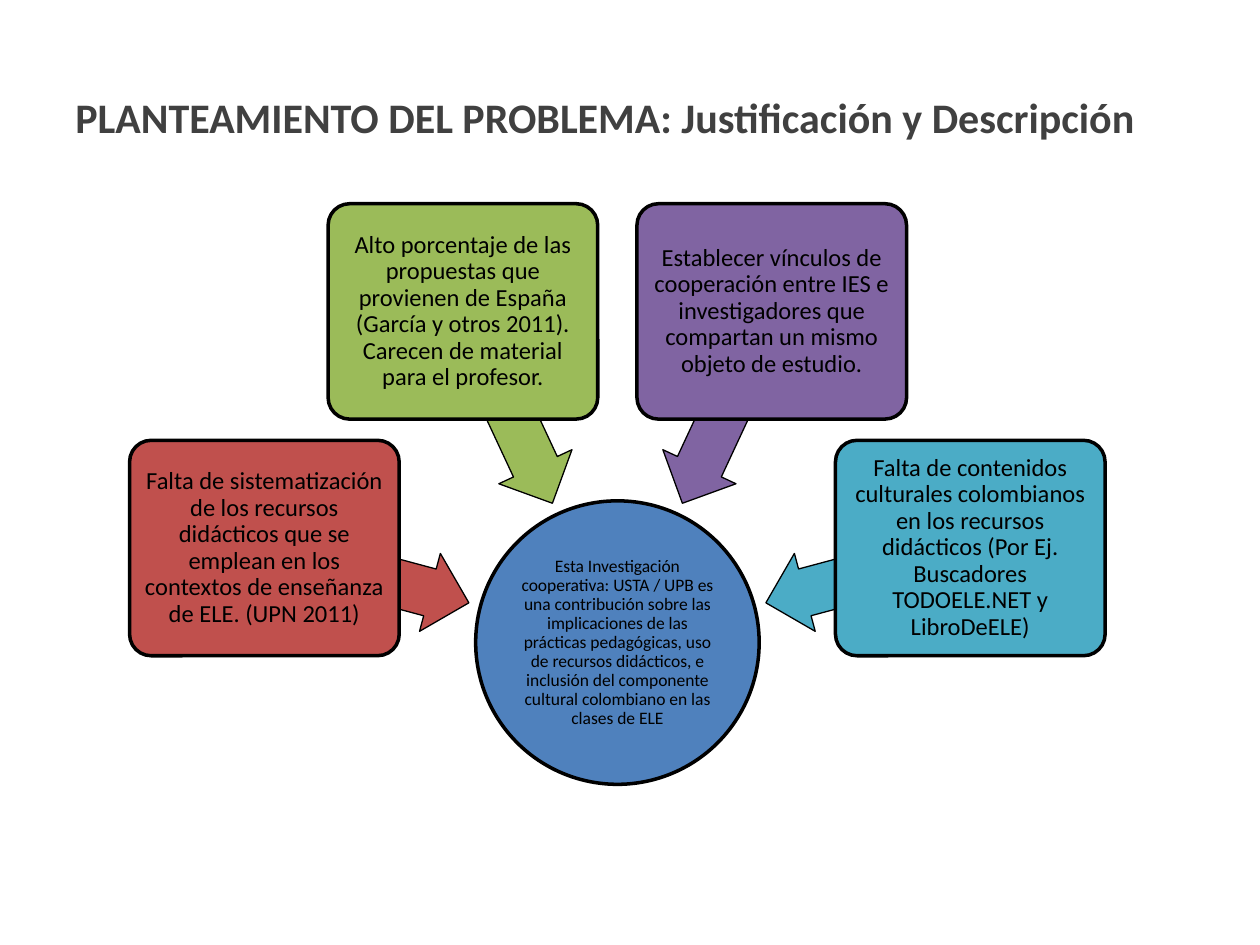
from math import cos, radians, sin

from pptx import Presentation
from pptx.dml.color import RGBColor
from pptx.enum.shapes import MSO_SHAPE as SHAPE
from pptx.enum.text import MSO_ANCHOR as ANCHOR, PP_ALIGN as ALIGN
from pptx.util import Inches, Pt

COLORS = {
    "title": "404040",
    "black": "000000",
    "blue": "4F81BD",
    "red": "C0504D",
    "green": "9BBB59",
    "purple": "8064A2",
    "teal": "4BACC6",
}

HUB_X, HUB_Y = 4.9, 5.1
HUB_TEXT = (
    "Esta Investigación cooperativa: USTA / UPB es una contribución sobre las "
    "implicaciones de las prácticas pedagógicas, uso de recursos didácticos, e "
    "inclusión del componente cultural colombiano en las clases de ELE"
)
FIRST_ANGLE, ANGLE_STEP = 195, 50
ARROW_RADIUS, BOX_RADIUS = 2.06, 2.9
REASONS = [
    ("red", "Falta de sistematización de los recursos didácticos que se emplean "
            "en los contextos de enseñanza de ELE. (UPN 2011)"),
    ("green", "Alto porcentaje de las propuestas que provienen de España (García "
              "y otros 2011). Carecen de material para el profesor."),
    ("purple", "Establecer vínculos de cooperación entre IES e investigadores que "
               "compartan un mismo objeto de estudio."),
    ("teal", "Falta de contenidos culturales colombianos en los recursos didácticos "
             "(Por Ej. Buscadores TODOELE.NET y LibroDeELE)"),
]


def around_hub(angle, radius):
    """Point at a clockwise angle in degrees from the right of the hub."""
    a = radians(angle)
    return HUB_X + radius * cos(a), HUB_Y + radius * sin(a)


class SlideBuilder:
    """Holds the current slide and the shared text and outline style."""

    font = "Calibri"

    def __init__(self, slide):
        self.s = slide

    def color(self, name):
        return RGBColor.from_string(COLORS[name])

    def set_text(self, tf, text, size, color="black", bold=False):
        tf.word_wrap = True
        tf.vertical_anchor = ANCHOR.MIDDLE
        p = tf.paragraphs[0]
        p.text = text
        p.font.name, p.font.size, p.font.bold = self.font, Pt(size), bold
        p.font.color.rgb = self.color(color)
        return p

    def title(self, text, x, y, w, h):
        sp = self.s.shapes.add_textbox(Inches(x), Inches(y), Inches(w), Inches(h))
        self.set_text(sp.text_frame, text, 24, "title", bold=True)

    def shape(self, kind, center, w, h, fill, line=2.0):
        x, y = center
        sp = self.s.shapes.add_shape(
            kind, Inches(x - w / 2), Inches(y - h / 2), Inches(w), Inches(h))
        sp.shadow.inherit = False
        sp.fill.solid()
        sp.fill.fore_color.rgb = self.color(fill)
        sp.line.color.rgb = self.color("black")
        sp.line.width = Pt(line)
        return sp

    def label(self, sp, text, size, inset):
        tf = sp.text_frame
        tf.margin_left = tf.margin_right = Inches(inset)
        tf.margin_top = tf.margin_bottom = Inches(inset)
        p = self.set_text(tf, text, size)
        p.alignment = ALIGN.CENTER
        p.line_spacing = 0.9

    def hub(self, text):
        sp = self.shape(SHAPE.OVAL, (HUB_X, HUB_Y), 2.25, 2.25, "blue")
        self.label(sp, text, 10, 0.01)

    def arrow(self, angle, fill):
        sp = self.shape(SHAPE.LEFT_ARROW, around_hub(angle, ARROW_RADIUS),
                        1.68, 0.64, fill, 0.75)
        sp.adjustments[0], sp.adjustments[1] = 0.6, 0.5
        sp.rotation = angle

    def box(self, angle, fill, text):
        sp = self.shape(SHAPE.ROUNDED_RECTANGLE, around_hub(angle, BOX_RADIUS),
                        2.14, 1.71, fill)
        sp.adjustments[0] = 0.1
        self.label(sp, text, 14, 0.03)


def main():
    prs = Presentation()
    prs.slide_width, prs.slide_height = Inches(10), Inches(7.5)
    b = SlideBuilder(prs.slides.add_slide(prs.slide_layouts[6]))

    b.title("PLANTEAMIENTO DEL PROBLEMA: Justificación y Descripción",
            0.5, 0.3, 8.81, 1.25)
    b.hub(HUB_TEXT)
    for i, (fill, text) in enumerate(REASONS):
        angle = FIRST_ANGLE + i * ANGLE_STEP
        b.arrow(angle, fill)
        b.box(angle, fill, text)

    prs.save("out.pptx")


if __name__ == "__main__":
    main()
